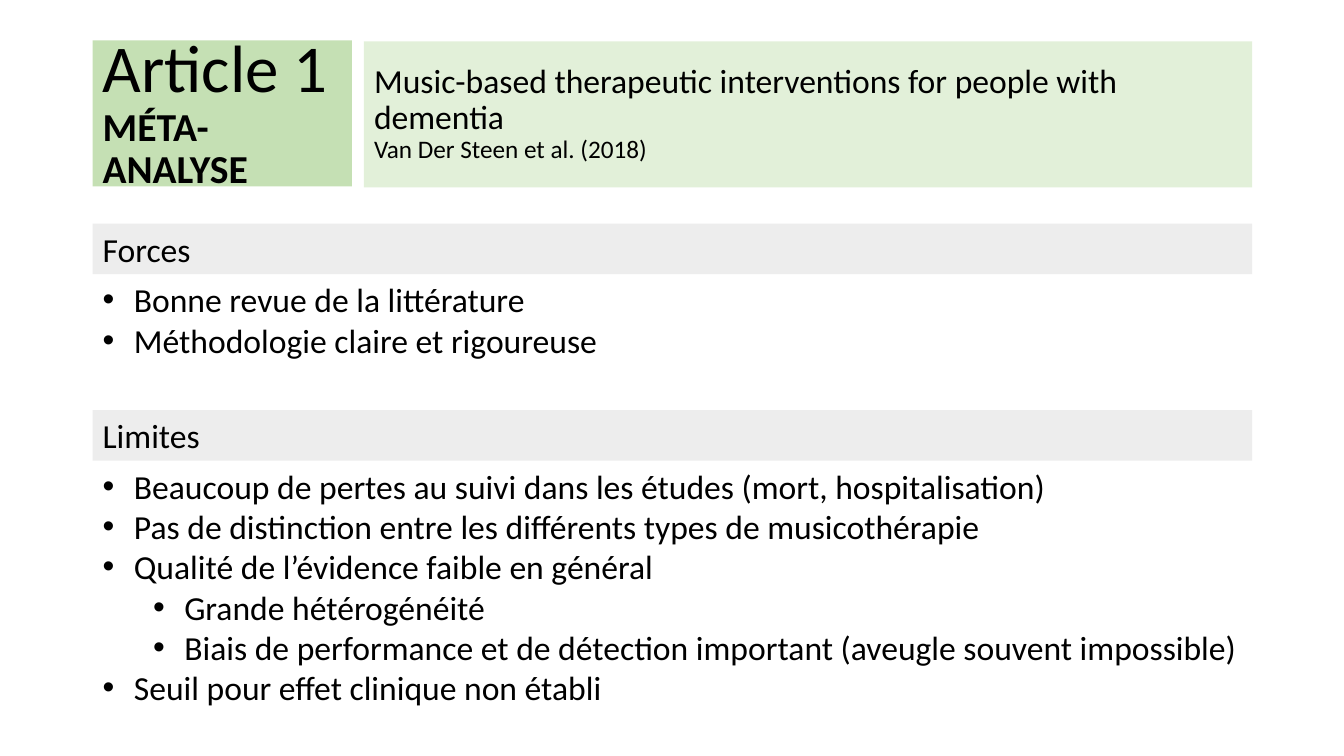
from dataclasses import dataclass

from lxml.etree import SubElement
from pptx import Presentation
from pptx.dml.color import RGBColor
from pptx.enum.shapes import MSO_SHAPE
from pptx.enum.text import MSO_ANCHOR, MSO_AUTO_SIZE, PP_ALIGN
from pptx.oxml.ns import qn
from pptx.util import Inches, Pt


@dataclass(frozen=True)
class Theme:
    face: str = "Calibri"
    ink: str = "000000"
    tag: str = "C5E0B4"
    head: str = "E2F0D9"
    band: str = "EDEDED"
    big: float = 47.8
    mid: float = 28.3
    body: float = 24
    small: float = 18


THEME = Theme()
WIDE, HIGH = 13.33, 7.5
LEFT, SPAN = 0.92, 11.5
TAG, GAP = 2.57, 0.12
TOP, TALL = 0.4, 1.45
BAND = 0.5
ROW = 0.4
PAD = 0.1
HANG, STEP = 0.31, 0.5

# Each section: top of its band, heading, and (level, text) points
PARTS = [
    (2.22, "Forces", [
        (0, "Bonne revue de la littérature"),
        (0, "Méthodologie claire et rigoureuse"),
    ]),
    (4.07, "Limites", [
        (0, "Beaucoup de pertes au suivi dans les études (mort, hospitalisation)"),
        (0, "Pas de distinction entre les différents types de musicothérapie"),
        (0, "Qualité de l’évidence faible en général"),
        (1, "Grande hétérogénéité"),
        (1, "Biais de performance et de détection important (aveugle souvent impossible)"),
        (0, "Seuil pour effet clinique non établi"),
    ]),
]


def paint(shape, color):
    shape.fill.solid()
    shape.fill.fore_color.rgb = RGBColor.from_string(color)


def style(para, size, bold=False, lead=None):
    para.alignment = PP_ALIGN.LEFT
    para.line_spacing = lead
    font = para.font
    font.name, font.size, font.bold = THEME.face, Pt(size), bold
    font.color.rgb = RGBColor.from_string(THEME.ink)


def wrap(shape, anchor):
    frame = shape.text_frame
    frame.word_wrap = True
    frame.auto_size = MSO_AUTO_SIZE.NONE
    frame.vertical_anchor = anchor
    return frame


def add_title(slide, name, cite):
    title = slide.shapes.title
    left = LEFT + TAG + GAP
    title.left, title.top = Inches(left), Inches(TOP + 0.01)
    title.width, title.height = Inches(LEFT + SPAN - left), Inches(TALL)
    paint(title, THEME.head)
    para = wrap(title, MSO_ANCHOR.MIDDLE).paragraphs[0]
    style(para, THEME.body, lead=0.9)
    para.add_run().text = name
    para.add_line_break()
    run = para.add_run()
    run.text = cite
    run.font.size = Pt(THEME.small)


def add_box(slide, top, width, height, color, lines, lead=None):
    """Draw a filled box; lines holds (text, size, bold)."""
    box = slide.shapes.add_shape(MSO_SHAPE.RECTANGLE, Inches(LEFT), Inches(top),
                                 Inches(width), Inches(height))
    box.shadow.inherit = False
    box.line.fill.background()
    paint(box, color)
    frame = wrap(box, MSO_ANCHOR.MIDDLE)
    frame.text = "\n".join(text for text, _, _ in lines)
    for para, (_, size, bold) in zip(frame.paragraphs, lines):
        style(para, size, bold, lead)


def add_list(slide, top, points):
    box = slide.shapes.add_textbox(Inches(LEFT), Inches(top), Inches(SPAN),
                                   Inches(PAD + ROW * len(points)))
    frame = wrap(box, MSO_ANCHOR.TOP)
    frame.text = "\n".join(text for _, text in points)
    for para, (level, _) in zip(frame.paragraphs, points):
        style(para, THEME.body)
        para.level = level
        props = para._p.get_or_add_pPr()
        props.set("marL", str(Inches(HANG + STEP * level)))
        props.set("indent", str(-Inches(HANG)))
        SubElement(props, qn("a:buFont")).set("typeface", "Arial")
        SubElement(props, qn("a:buChar")).set("char", "•")
        # The schema wants default run properties after the bullet
        props.append(props.find(qn("a:defRPr")))


def main():
    deck = Presentation()
    deck.slide_width, deck.slide_height = Inches(WIDE), Inches(HIGH)
    slide = deck.slides.add_slide(deck.slide_layouts.get_by_name("Title Only"))
    add_title(slide, "Music-based therapeutic interventions for people with dementia",
              "Van Der Steen et al. (2018)")
    add_box(slide, TOP, TAG, TALL, THEME.tag,
            [("Article 1", THEME.big, False), ("MÉTA-ANALYSE", THEME.mid, True)], 0.9)
    for top, head, points in PARTS:
        add_box(slide, top, SPAN, BAND, THEME.band, [(head, THEME.body, False)])
        add_list(slide, top + BAND, points)
    deck.save("out.pptx")


if __name__ == "__main__":
    main()
